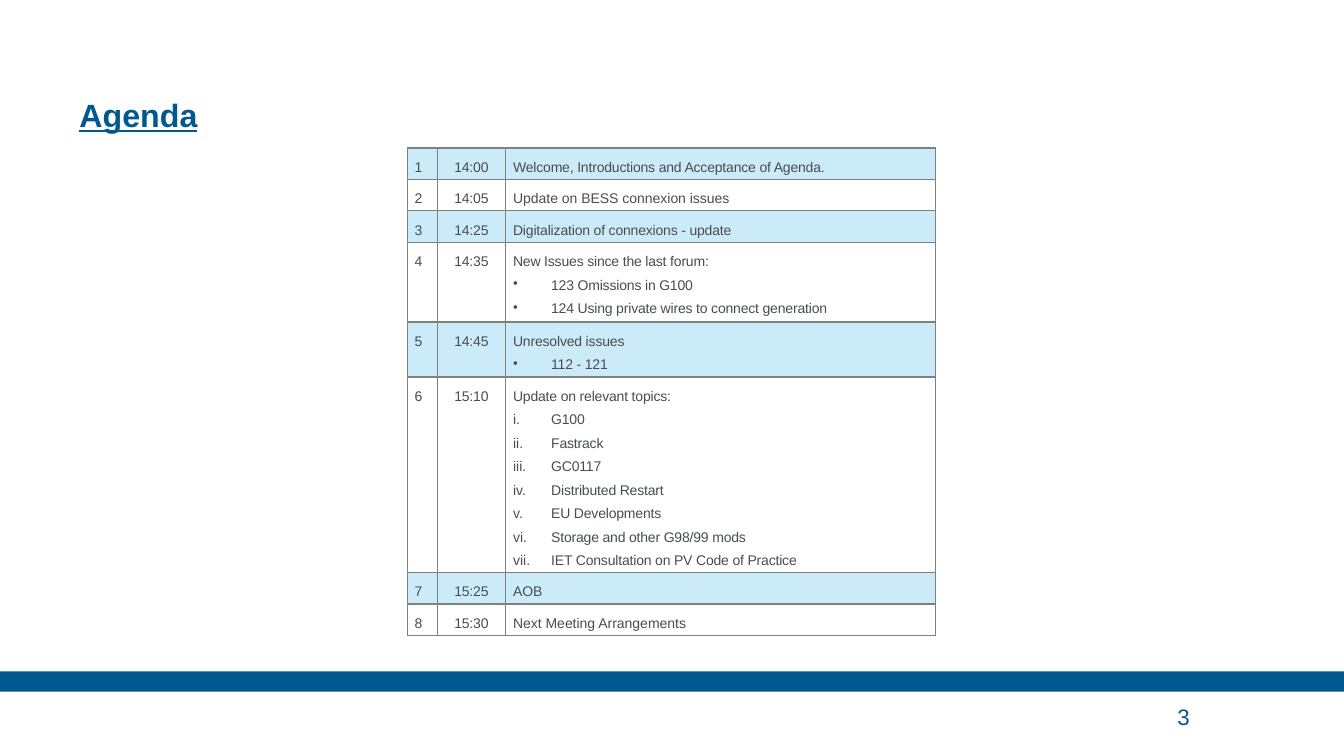
from dataclasses import dataclass
from typing import Any

from lxml import etree
from pptx import Presentation
from pptx.dml import color
from pptx.enum import shapes, text
from pptx.oxml import ns
from pptx.util import Cm, Pt

COLOURS = {"navy": "00598E", "sky": "009FE3", "grey": "808080", "body": "484D51"}
FONT = "Arial"
TIGHT = -0.1
BULLET = ("buChar", "char", "•")
ROMAN = ("buAutoNum", "type", "romanLcPeriod")
SHORT_ROW = 0.79
COLUMN_WIDTHS = (0.76, 1.72, 10.84)


@dataclass(frozen=True)
class AgendaItem:
    time: str
    topic: str
    points: tuple[str, ...] = ()
    marker: tuple[str, str, str] = BULLET
    spacing: float = TIGHT
    height: float = SHORT_ROW


AGENDA = (
    AgendaItem("14:00", "Welcome, Introductions and Acceptance of Agenda."),
    AgendaItem("14:05", "Update on BESS connexion issues", spacing=0),
    AgendaItem("14:25", "Digitalization of connexions - update"),
    AgendaItem(
        "14:35",
        "New Issues since the last forum:",
        ("123 Omissions in G100", "124 Using private wires to connect generation"),
        height=2.01,
    ),
    AgendaItem("14:45", "Unresolved issues", ("112 - 121",), height=1.38),
    AgendaItem(
        "15:10",
        "Update on relevant topics:",
        (
            "G100",
            "Fastrack",
            "GC0117",
            "Distributed Restart",
            "EU Developments",
            "Storage and other G98/99 mods",
            "IET Consultation on PV Code of Practice",
        ),
        ROMAN,
        height=4.92,
    ),
    AgendaItem("15:25", "AOB", spacing=0),
    AgendaItem("15:30", "Next Meeting Arrangements", spacing=0),
)


def rgb(name: str) -> color.RGBColor:
    return color.RGBColor.from_string(COLOURS[name])


def write_text(
    paragraph: Any,
    content: str,
    *,
    size: float = 10,
    colour: str = "body",
    bold: bool = False,
    underline: bool = False,
    align: text.PP_ALIGN = text.PP_ALIGN.LEFT,
    line_spacing: Any = None,
    spacing: float = 0,
    marker: tuple[str, str, str] | None = None,
) -> None:
    paragraph.alignment = align
    paragraph.line_spacing = line_spacing
    if marker:
        tag, attribute, value = marker
        properties = paragraph._p.get_or_add_pPr()
        properties.set("marL", str(Cm(0.96)))
        properties.set("indent", str(-Cm(0.96)))
        etree.SubElement(properties, ns.qn(f"a:{tag}")).set(attribute, value)
    run = paragraph.add_run()
    run.text = content
    font = run.font
    font.name, font.size, font.bold, font.underline = FONT, Pt(size), bold, underline
    font.color.rgb = rgb(colour)
    if spacing:
        run._r.get_or_add_rPr().set("spc", str(round(spacing * 100)))


def prepare_frame(frame: Any, anchor: text.MSO_ANCHOR) -> None:
    frame.margin_left = frame.margin_right = frame.margin_top = frame.margin_bottom = 0
    frame.vertical_anchor = anchor
    frame.auto_size = text.MSO_AUTO_SIZE.NONE
    frame.word_wrap = True


def format_cell(cell: Any, shaded: bool) -> None:
    cell.margin_left = cell.margin_right = Cm(0.19)
    cell.margin_top = cell.margin_bottom = Cm(0.1)
    cell.vertical_anchor = text.MSO_ANCHOR.TOP
    properties = cell._tc.get_or_add_tcPr()
    if shaded:
        cell.fill.solid()
        cell.fill.fore_color.rgb = rgb("sky")
        tint = properties.find(f".//{ns.qn('a:srgbClr')}")
        etree.SubElement(tint, ns.qn("a:alpha")).set("val", "20000")
    else:
        cell.fill.background()
    for position, side in enumerate("LRTB"):
        border = etree.Element(ns.qn(f"a:ln{side}"), w=str(Pt(1)))
        fill = etree.SubElement(border, ns.qn("a:solidFill"))
        etree.SubElement(fill, ns.qn("a:srgbClr")).set("val", COLOURS["grey"])
        properties.insert(position, border)


def add_agenda(slide: Any) -> None:
    frame = slide.shapes.add_table(
        len(AGENDA), len(COLUMN_WIDTHS), Cm(10.26), Cm(3.73),
        Cm(sum(COLUMN_WIDTHS)), Cm(sum(item.height for item in AGENDA)),
    )
    table = frame.table
    table.first_row = table.horz_banding = False
    for column, width in zip(table.columns, COLUMN_WIDTHS):
        column.width = Cm(width)
    for index, item in enumerate(AGENDA):
        table.rows[index].height = Cm(item.height)
        number, time, topic = table.rows[index].cells
        for cell in (number, time, topic):
            format_cell(cell, shaded=index % 2 == 0)
        write_text(number.text_frame.paragraphs[0], str(index + 1),
                   line_spacing=1.5, spacing=TIGHT)
        write_text(time.text_frame.paragraphs[0], item.time, line_spacing=1.5,
                   spacing=TIGHT, align=text.PP_ALIGN.CENTER)
        write_text(topic.text_frame.paragraphs[0], item.topic,
                   line_spacing=1.5, spacing=item.spacing)
        for point in item.points:
            write_text(topic.text_frame.add_paragraph(), point, line_spacing=1.5,
                       spacing=item.spacing, marker=item.marker)


def main() -> None:
    presentation = Presentation()
    presentation.slide_width, presentation.slide_height = Cm(33.87), Cm(19.05)
    slide = presentation.slides.add_slide(presentation.slide_layouts[5])

    bar = slide.shapes.add_shape(
        shapes.MSO_SHAPE.RECTANGLE, 0, Cm(16.92), presentation.slide_width, Cm(0.51)
    )
    bar.shadow.inherit = False
    bar.fill.solid()
    bar.fill.fore_color.rgb = rgb("navy")
    bar.line.fill.background()

    title = slide.shapes.title
    title.left, title.top, title.width, title.height = Cm(2), Cm(0.79), Cm(25), Cm(2.59)
    prepare_frame(title.text_frame, text.MSO_ANCHOR.BOTTOM)
    write_text(title.text_frame.paragraphs[0], "Agenda", size=23, colour="navy",
               bold=True, underline=True, line_spacing=Pt(30))

    page_number = slide.shapes.add_textbox(Cm(29.67), Cm(17.55), Cm(3.12), Cm(1))
    prepare_frame(page_number.text_frame, text.MSO_ANCHOR.MIDDLE)
    write_text(page_number.text_frame.paragraphs[0], "3", size=16, colour="navy")

    add_agenda(slide)
    presentation.save("out.pptx")


if __name__ == "__main__":
    main()
